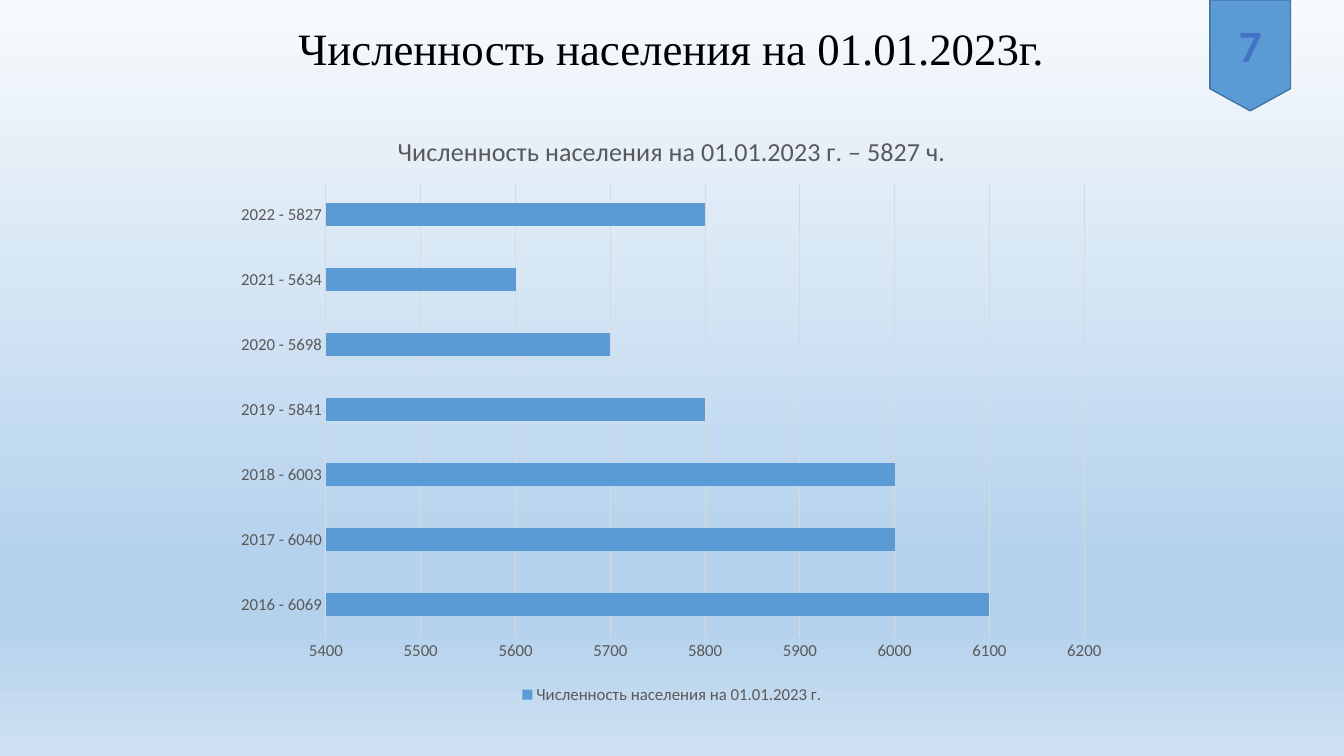
from lxml import etree
from pptx import Presentation
from pptx.chart.data import CategoryChartData
from pptx.dml.color import RGBColor
from pptx.enum.chart import XL_CHART_TYPE, XL_LEGEND_POSITION, XL_TICK_MARK
from pptx.enum.shapes import MSO_SHAPE
from pptx.enum.text import MSO_ANCHOR, PP_ALIGN
from pptx.oxml.ns import qn
from pptx.util import Inches, Pt

BAR = XL_CHART_TYPE.BAR_CLUSTERED
BOTTOM_LEGEND = XL_LEGEND_POSITION.BOTTOM
NO_TICK = XL_TICK_MARK.NONE
BADGE = MSO_SHAPE.FLOWCHART_OFFPAGE_CONNECTOR
MIDDLE, BOTTOM = MSO_ANCHOR.MIDDLE, MSO_ANCHOR.BOTTOM
CENTER = PP_ALIGN.CENTER

BLACK = RGBColor(0x00, 0x00, 0x00)
BLUE = RGBColor(0x5B, 0x9B, 0xD5)
DARK_BLUE = RGBColor(0x43, 0x73, 0x9E)
NUMBER_BLUE = RGBColor(0x44, 0x72, 0xC4)
GREY = RGBColor(0x59, 0x59, 0x59)
GRID = RGBColor(0xD9, 0xD9, 0xD9)
PALE = RGBColor(0xF7, 0xFA, 0xFD)
SKY = RGBColor(0xB5, 0xD2, 0xEC)
LIGHT = RGBColor(0xCE, 0xE1, 0xF2)
BACKGROUND = [(0, PALE), (74, SKY), (83, SKY), (100, LIGHT)]

SERIES = "Численность населения на 01.01.2023 г."
POPULATION = {2016: 6069, 2017: 6040, 2018: 6003, 2019: 5841,
              2020: 5698, 2021: 5634, 2022: 5827}
PLOT_AREA = {"x": 0.114, "y": 0.12, "w": 0.846, "h": 0.76}


def set_font(font, size, color, name="Calibri", bold=False):
    font.size, font.name, font.bold = Pt(size), name, bold
    font.color.rgb = color


def write(tf, text, anchor=None, spacing=None, **fmt):
    if anchor is not None:
        tf.word_wrap = True
        tf.vertical_anchor = anchor
    p = tf.paragraphs[0]
    p.alignment = CENTER
    p.line_spacing = spacing
    r = p.add_run()
    r.text = text
    set_font(r.font, **fmt)


def paint_background(s):
    s.background.fill.gradient()
    grad = s.element.find(".//" + qn("a:gradFill"))
    stops = grad.find(qn("a:gsLst"))
    for gs in list(stops):
        stops.remove(gs)
    for pos, color in BACKGROUND:
        gs = etree.SubElement(stops, qn("a:gs"), pos=str(pos * 1000))
        etree.SubElement(gs, qn("a:srgbClr"), val=str(color))
    grad.find(qn("a:lin")).set("ang", "5400000")


def add_title(s, x, y, w, h):
    box = s.shapes.add_textbox(Inches(x), Inches(y), Inches(w), Inches(h))
    write(box.text_frame, "Численность населения на 01.01.2023г.",
          anchor=BOTTOM, spacing=0.9, size=32, color=BLACK,
          name="Times New Roman")


def add_badge(s, x, y, w, h):
    sp = s.shapes.add_shape(BADGE, Inches(x), Inches(y), Inches(w), Inches(h))
    sp.shadow.inherit = False
    sp.fill.solid()
    sp.fill.fore_color.rgb = BLUE
    sp.line.color.rgb = DARK_BLUE
    sp.line.width = Pt(1)
    write(sp.text_frame, "7", anchor=MIDDLE, size=32, color=NUMBER_BLUE,
          bold=True)


def style_line(line):
    line.color.rgb = GRID
    line.width = Pt(0.75)


def place_plot(chart):
    area = chart.element.find(".//" + qn("c:plotArea"))
    layout = area.find(qn("c:layout"))
    if layout is None:
        layout = etree.Element(qn("c:layout"))
        area.insert(0, layout)
    manual = etree.SubElement(layout, qn("c:manualLayout"))
    etree.SubElement(manual, qn("c:layoutTarget"), val="inner")
    for side in "xy":
        etree.SubElement(manual, qn(f"c:{side}Mode"), val="edge")
    for side, share in PLOT_AREA.items():
        etree.SubElement(manual, qn(f"c:{side}"), val=str(share))


def add_population_chart(s, x, y, w, h):
    data = CategoryChartData()
    data.categories = [f"{year} - {n}" for year, n in POPULATION.items()]
    data.add_series(SERIES, [round(n, -2) for n in POPULATION.values()])
    chart = s.shapes.add_chart(BAR, Inches(x), Inches(y), Inches(w),
                               Inches(h), data).chart
    set_font(chart.font, 12, GREY)
    place_plot(chart)

    # Title and legend
    chart.has_title = True
    write(chart.chart_title.text_frame, SERIES + " – 5827 ч.",
          size=18.6, color=GREY)
    chart.chart_title.include_in_layout = False
    chart.has_legend = True
    chart.legend.position = BOTTOM_LEGEND
    chart.legend.include_in_layout = False
    set_font(chart.legend.font, 12, GREY)

    # Axes
    cat, val = chart.category_axis, chart.value_axis
    for axis in (cat, val):
        axis.major_tick_mark = axis.minor_tick_mark = NO_TICK
        set_font(axis.tick_labels.font, 12, GREY)
    cat.has_major_gridlines = False
    style_line(cat.format.line)
    val.minimum_scale, val.maximum_scale, val.major_unit = 5400, 6200, 100
    val.format.line.fill.background()
    val.has_major_gridlines = True
    style_line(val.major_gridlines.format.line)

    # Bars
    plot = chart.plots[0]
    plot.gap_width = 182
    plot.vary_by_categories = False
    fill = plot.series[0].format.fill
    fill.solid()
    fill.fore_color.rgb = BLUE


def main():
    prs = Presentation()
    prs.slide_width, prs.slide_height = Inches(13.33), Inches(7.5)
    s = prs.slides.add_slide(prs.slide_layouts[6])
    paint_background(s)
    add_title(s, 0.91, 0, 11.5, 0.79)
    add_badge(s, 12, 0, 0.8, 1.1)
    add_population_chart(s, 2.22, 1.1, 8.89, 5.93)
    prs.save("out.pptx")


if __name__ == "__main__":
    main()
